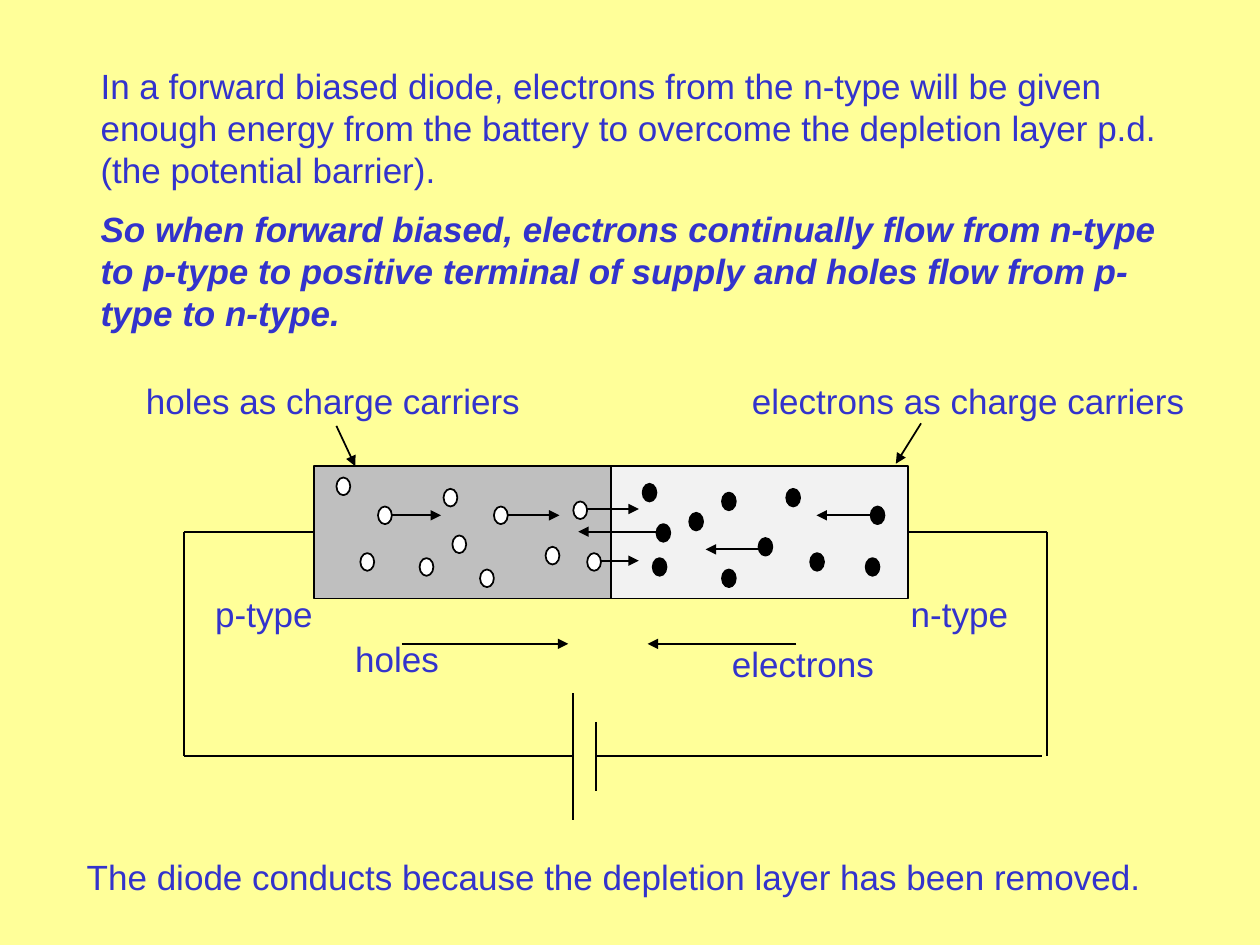
from dataclasses import dataclass
from typing import NamedTuple

import lxml.etree
import pptx
import pptx.dml.color
import pptx.enum.shapes
import pptx.enum.text
import pptx.oxml.ns
import pptx.util

EMU_PER_PX = 9144  # 100 px to the inch


def px(length: int) -> pptx.util.Emu:
    return pptx.util.Emu(length * EMU_PER_PX)


def rgb(code: str) -> pptx.dml.color.RGBColor:
    return pptx.dml.color.RGBColor.from_string(code)


@dataclass(frozen=True)
class Theme:
    background: str = "FFFF99"
    text: str = "3333CC"
    ink: str = "000000"
    p_region: str = "BFBFBF"
    n_region: str = "F2F2F2"
    hole: str = "FFFFFF"
    electron: str = "000000"
    font: str = "Arial"
    text_pt: int = 20
    paragraph_gap_pt: int = 10
    line_pt: int = 1


THEME = Theme()


class Paragraph(NamedTuple):
    text: str
    emphasis: bool = False


class Caption(NamedTuple):
    left: int
    top: int
    width: int
    height: int
    paragraphs: tuple[Paragraph, ...]


class Line(NamedTuple):
    x1: int
    y1: int
    x2: int
    y2: int


class Point(NamedTuple):
    x: int
    y: int


def draw_caption(shapes, caption: Caption) -> None:
    frame = shapes.add_textbox(*map(px, caption[:4])).text_frame
    frame.word_wrap = True
    frame.auto_size = pptx.enum.text.MSO_AUTO_SIZE.SHAPE_TO_FIT_TEXT
    for index, content in enumerate(caption.paragraphs):
        paragraph = frame.add_paragraph() if index else frame.paragraphs[0]
        if index:
            paragraph.space_before = pptx.util.Pt(THEME.paragraph_gap_pt)
        run = paragraph.add_run()
        run.text = content.text
        run.font.name = THEME.font
        run.font.size = pptx.util.Pt(THEME.text_pt)
        run.font.color.rgb = rgb(THEME.text)
        if content.emphasis:
            run.font.bold = run.font.italic = True


def draw_line(shapes, line: Line, arrow: bool = False) -> None:
    connector = shapes.add_connector(
        pptx.enum.shapes.MSO_CONNECTOR.STRAIGHT, *map(px, line))
    connector.line.color.rgb = rgb(THEME.ink)
    connector.line.width = pptx.util.Pt(THEME.line_pt)
    qn = pptx.oxml.ns.qn
    if arrow:
        outline = connector.line._get_or_add_ln()
        lxml.etree.SubElement(outline, qn("a:tailEnd"), type="triangle")
    lxml.etree.SubElement(connector._element.spPr, qn("a:effectLst"))


def draw_shape(shapes, kind, left: int, top: int, width: int, height: int,
               fill: str) -> None:
    shape = shapes.add_shape(kind, *map(px, (left, top, width, height)))
    shape.shadow.inherit = False
    shape.fill.solid()
    shape.fill.fore_color.rgb = rgb(fill)
    shape.line.color.rgb = rgb(THEME.ink)
    shape.line.width = pptx.util.Pt(THEME.line_pt)


def draw_carriers(shapes, carriers: tuple[Point, ...], fill: str) -> None:
    for carrier in carriers:
        draw_shape(shapes, pptx.enum.shapes.MSO_SHAPE.OVAL,
                   carrier.x, carrier.y, 11, 14, fill)


EXPLANATION = Caption(70, 46, 874, 227, (
    Paragraph("In a forward biased diode, electrons from the n-type will be "
              "given enough energy from the battery to overcome the depletion "
              "layer p.d. (the potential barrier)."),
    Paragraph("So when forward biased, electrons continually flow from n-type "
              "to p-type to positive terminal of supply and holes flow from "
              "p-type to n-type.", emphasis=True),
))
CONCLUSION = Caption(59, 674, 906, 43, (
    Paragraph("The diode conducts because the depletion layer has been "
              "removed."),
))
LABELS = tuple(
    Caption(left, top, width, 43, (Paragraph(text),))
    for left, top, width, text in (
        (106, 296, 339, "holes as charge carriers"),
        (587, 296, 370, "electrons as charge carriers"),
        (161, 465, 134, "p-type"),
        (713, 465, 134, "n-type"),
        (272, 501, 102, "holes"),
        (571, 505, 134, "electrons"),
    ))

# Circuit: wires meet the diode at mid height and the cell at the bottom
LEFT, RIGHT, MIDDLE, BOTTOM = 146, 831, 422, 600
POSITIVE, NEGATIVE = 455, 473
DIODE_LEFT, DIODE_TOP, REGION_WIDTH, DIODE_HEIGHT = 249, 370, 236, 105
DIODE_WIRE = Line(LEFT, MIDDLE, RIGHT, MIDDLE)
CIRCUIT = (
    Line(LEFT, MIDDLE, LEFT, BOTTOM),
    Line(LEFT, BOTTOM, POSITIVE, BOTTOM),
    Line(POSITIVE, 550, POSITIVE, 651),
    Line(NEGATIVE, 573, NEGATIVE, 628),
    Line(NEGATIVE, BOTTOM, 827, BOTTOM),
    Line(RIGHT, MIDDLE, RIGHT, BOTTOM),
)

HOLES = (
    Point(300, 402), Point(333, 443), Point(381, 452), Point(392, 402),
    Point(352, 388), Point(286, 439), Point(359, 425), Point(267, 379),
    Point(466, 439), Point(433, 434), Point(455, 398),
)
ELECTRONS = (
    Point(521, 416), Point(518, 443), Point(573, 391), Point(602, 427),
    Point(687, 443), Point(624, 388), Point(691, 402), Point(643, 439),
    Point(547, 407), Point(573, 452), Point(510, 384),
)
ARROWS = (
    # overall flow
    Line(632, 511, 514, 511), Line(319, 511, 451, 511),
    # label pointers
    Line(267, 338, 282, 370), Line(731, 336, 711, 368),
    # crossing the junction
    Line(466, 404, 507, 404), Line(477, 445, 507, 445),
    Line(525, 422, 459, 422),
    # drift inside each region
    Line(403, 409, 444, 409), Line(310, 409, 350, 409),
    Line(698, 409, 648, 409), Line(610, 436, 560, 436),
)


def draw_diagram(shapes) -> None:
    # Diode regions over the wire
    draw_line(shapes, DIODE_WIRE)
    for index, fill in enumerate((THEME.p_region, THEME.n_region)):
        draw_shape(shapes, pptx.enum.shapes.MSO_SHAPE.RECTANGLE,
                   DIODE_LEFT + index * REGION_WIDTH, DIODE_TOP,
                   REGION_WIDTH, DIODE_HEIGHT, fill)
    # Charge carriers and their motion
    draw_carriers(shapes, HOLES, THEME.hole)
    draw_carriers(shapes, ELECTRONS, THEME.electron)
    for arrow in ARROWS:
        draw_line(shapes, arrow, arrow=True)
    # Wires, cell and labels
    for wire in CIRCUIT:
        draw_line(shapes, wire)
    for label in LABELS:
        draw_caption(shapes, label)


def main() -> None:
    deck = pptx.Presentation()
    deck.slide_width, deck.slide_height = px(1000), px(750)
    slide = deck.slides.add_slide(deck.slide_layouts[6])
    slide.background.fill.solid()
    slide.background.fill.fore_color.rgb = rgb(THEME.background)
    draw_caption(slide.shapes, EXPLANATION)
    draw_caption(slide.shapes, CONCLUSION)
    draw_diagram(slide.shapes.add_group_shape().shapes)
    deck.save("out.pptx")


if __name__ == "__main__":
    main()
